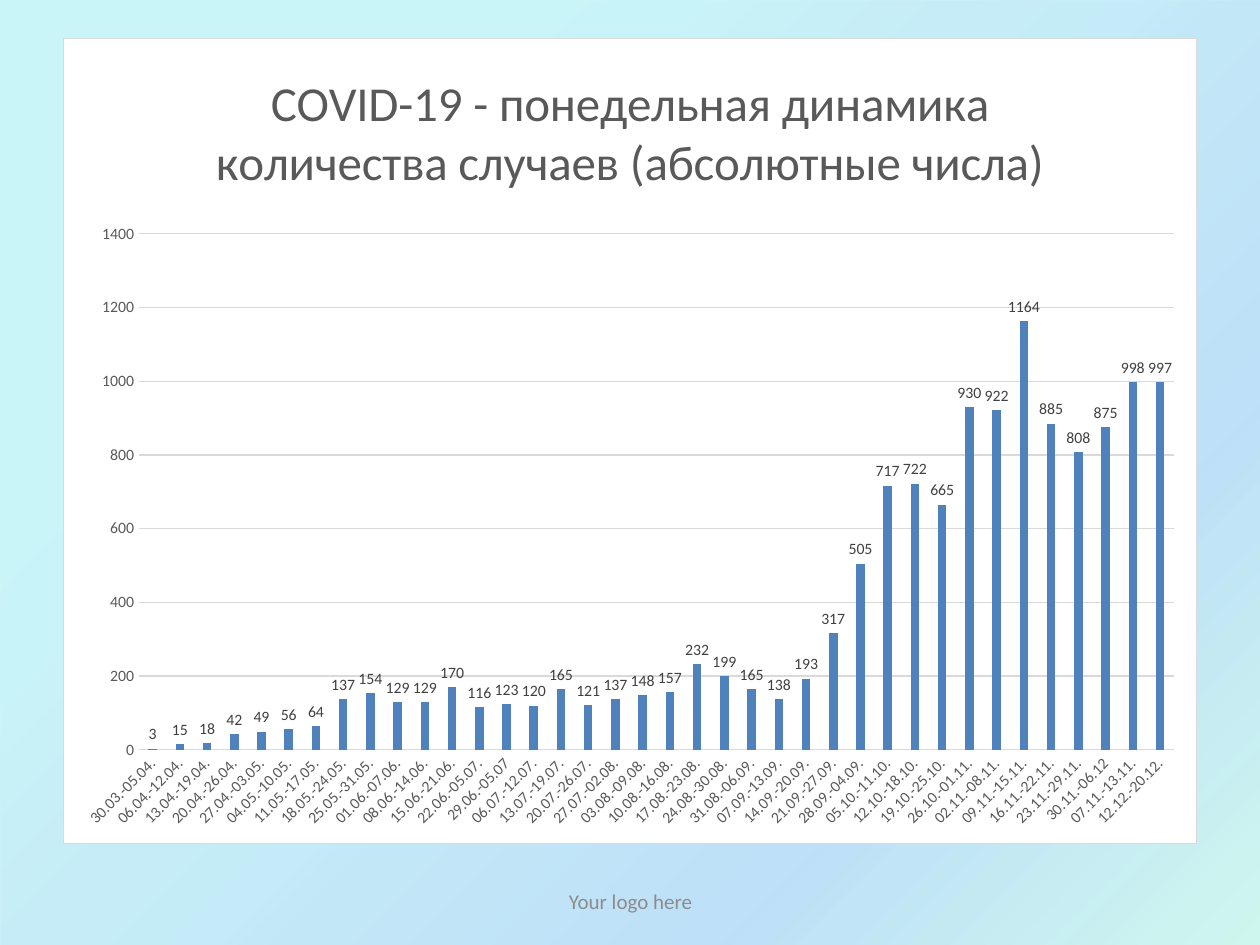
import pptx
import pptx.chart.data
import pptx.dml.color
import pptx.enum.chart
import pptx.enum.shapes
import pptx.enum.text
import pptx.oxml
import pptx.oxml.ns
import pptx.util

Inches, Pt = pptx.util.Inches, pptx.util.Pt
FONT = "Calibri"
GREY, TEXT = "D9D9D9", "595959"
TITLE = "COVID-19 - понедельная динамика количества случаев (абсолютные числа)"
GRADIENT = [(25, "21D6E0", 23), (75, "0087E6", 25), (100, "03D4A8", 18), (100, "005CBF", 26)]
WEEKLY_CASES = [
    ("30.03.-05.04.", 3), ("06.04.-12.04.", 15), ("13.04.-19.04.", 18),
    ("20.04.-26.04.", 42), ("27.04.-03.05.", 49), ("04.05.-10.05.", 56),
    ("11.05.-17.05.", 64), ("18.05.-24.05.", 137), ("25.05.-31.05.", 154),
    ("01.06.-07.06.", 129), ("08.06.-14.06.", 129), ("15.06.-21.06.", 170),
    ("22.06.-05.07.", 116), ("29.06.-05.07", 123), ("06.07.-12.07.", 120),
    ("13.07.-19.07.", 165), ("20.07.-26.07.", 121), ("27.07.-02.08.", 137),
    ("03.08.-09.08.", 148), ("10.08.-16.08.", 157), ("17.08.-23.08.", 232),
    ("24.08.-30.08.", 199), ("31.08.-06.09.", 165), ("07.09.-13.09.", 138),
    ("14.09.-20.09.", 193), ("21.09.-27.09.", 317), ("28.09.-04.09.", 505),
    ("05.10.-11.10.", 717), ("12.10.-18.10.", 722), ("19.10.-25.10.", 665),
    ("26.10.-01.11.", 930), ("02.11.-08.11.", 922), ("09.11.-15.11.", 1164),
    ("16.11.-22.11.", 885), ("23.11.-29.11.", 808), ("30.11.-06.12", 875),
    ("07.11.-13.11.", 998), ("12.12.-20.12.", 997),
]


def rgb(value):
    """Return the colour for a hex string."""
    return pptx.dml.color.RGBColor.from_string(value)


def set_font(font, size, color):
    """Set typeface, size and colour of a font."""
    font.name, font.size, font.bold = FONT, Pt(size), False
    font.color.rgb = rgb(color)


def set_line(line, color):
    """Give a line the thin width and a colour."""
    line.color.rgb = rgb(color)
    line.width = Pt(0.75)


def add_backdrop(s, x, y, w, h):
    """Fill the box with a translucent diagonal gradient."""
    shape = s.shapes.add_shape(pptx.enum.shapes.MSO_SHAPE.RECTANGLE, x, y, w, h)
    shape.shadow.inherit = False
    shape.line.fill.background()
    stops = "".join(
        f'<a:gs pos="{pos * 1000}"><a:srgbClr val="{color}">'
        f'<a:alpha val="{alpha * 1000}"/></a:srgbClr></a:gs>'
        for pos, color, alpha in GRADIENT
    )
    fill = pptx.oxml.parse_xml(
        f'<a:gradFill {pptx.oxml.ns.nsdecls("a")} rotWithShape="1"><a:gsLst>{stops}</a:gsLst>'
        '<a:lin ang="2700000" scaled="0"/></a:gradFill>'
    )
    shape.fill.background()
    sp_pr = shape._element.spPr
    sp_pr.replace(sp_pr.find(pptx.oxml.ns.qn("a:noFill")), fill)


def add_footer(s, x, y, w, h):
    """Place the centred footer text in the box."""
    tf = s.shapes.add_textbox(x, y, w, h).text_frame
    tf.word_wrap = True
    tf.vertical_anchor = pptx.enum.text.MSO_ANCHOR.MIDDLE
    p = tf.paragraphs[0]
    p.text = "Your logo here"
    p.alignment = pptx.enum.text.PP_ALIGN.CENTER
    set_font(p.font, 12, "8C8C8C")


def style_axes(chart):
    """Style both axes and the value gridlines."""
    for axis in (chart.category_axis, chart.value_axis):
        axis.major_tick_mark = axis.minor_tick_mark = pptx.enum.chart.XL_TICK_MARK.NONE
        set_font(axis.tick_labels.font, 9, TEXT)
    set_line(chart.category_axis.format.line, GREY)
    chart.category_axis.has_major_gridlines = False
    body = chart.category_axis._element.find(".//" + pptx.oxml.ns.qn("a:bodyPr"))
    body.set("rot", "-2700000")
    body.set("vert", "horz")
    chart.value_axis.format.line.fill.background()
    chart.value_axis.has_major_gridlines = True
    set_line(chart.value_axis.major_gridlines.format.line, GREY)


def style_columns(plot):
    """Style the columns and their value labels."""
    plot.gap_width, plot.overlap = 219, -27
    plot.vary_by_categories = False
    series = plot.series[0]
    series.format.fill.solid()
    series.format.fill.fore_color.rgb = rgb("4F81BD")
    series.invert_if_negative = False
    labels = series.data_labels
    labels.show_value = True
    labels.position = pptx.enum.chart.XL_LABEL_POSITION.OUTSIDE_END
    set_font(labels.font, 9, "404040")


def add_case_chart(s, x, y, w, h):
    """Draw the weekly case chart on its white panel."""
    weeks, cases = zip(*WEEKLY_CASES)
    data = pptx.chart.data.CategoryChartData()
    data.categories = weeks
    data.add_series("Series 1", cases)
    kind = pptx.enum.chart.XL_CHART_TYPE.COLUMN_CLUSTERED
    chart = s.shapes.add_chart(kind, x, y, w, h, data).chart
    set_font(chart.font, 10, "000000")
    chart.has_legend = False
    chart.has_title = True
    p = chart.chart_title.text_frame.paragraphs[0]
    p.text = TITLE
    set_font(p.font, 28, TEXT)
    chart.chart_title.include_in_layout = False
    style_axes(chart)
    style_columns(chart.plots[0])
    panel = pptx.oxml.parse_xml(
        f'<c:spPr {pptx.oxml.ns.nsdecls("c", "a")}>'
        '<a:solidFill><a:srgbClr val="FFFFFF"/></a:solidFill>'
        f'<a:ln w="{Pt(0.75)}"><a:solidFill><a:srgbClr val="{GREY}"/></a:solidFill></a:ln>'
        '</c:spPr>'
    )
    chart._chartSpace.find(pptx.oxml.ns.qn("c:chart")).addnext(panel)


def main():
    """Build the slide and save it."""
    prs = pptx.Presentation()
    prs.slide_width, prs.slide_height = Inches(10), Inches(7.5)
    s = prs.slides.add_slide(prs.slide_layouts[6])
    add_backdrop(s, 0, 0, Inches(10), Inches(7.67))
    add_footer(s, Inches(3.42), Inches(6.95), Inches(3.17), Inches(0.4))
    add_case_chart(s, Inches(0.5), Inches(0.3), Inches(9), Inches(6.4))
    prs.save("out.pptx")


if __name__ == "__main__":
    main()
